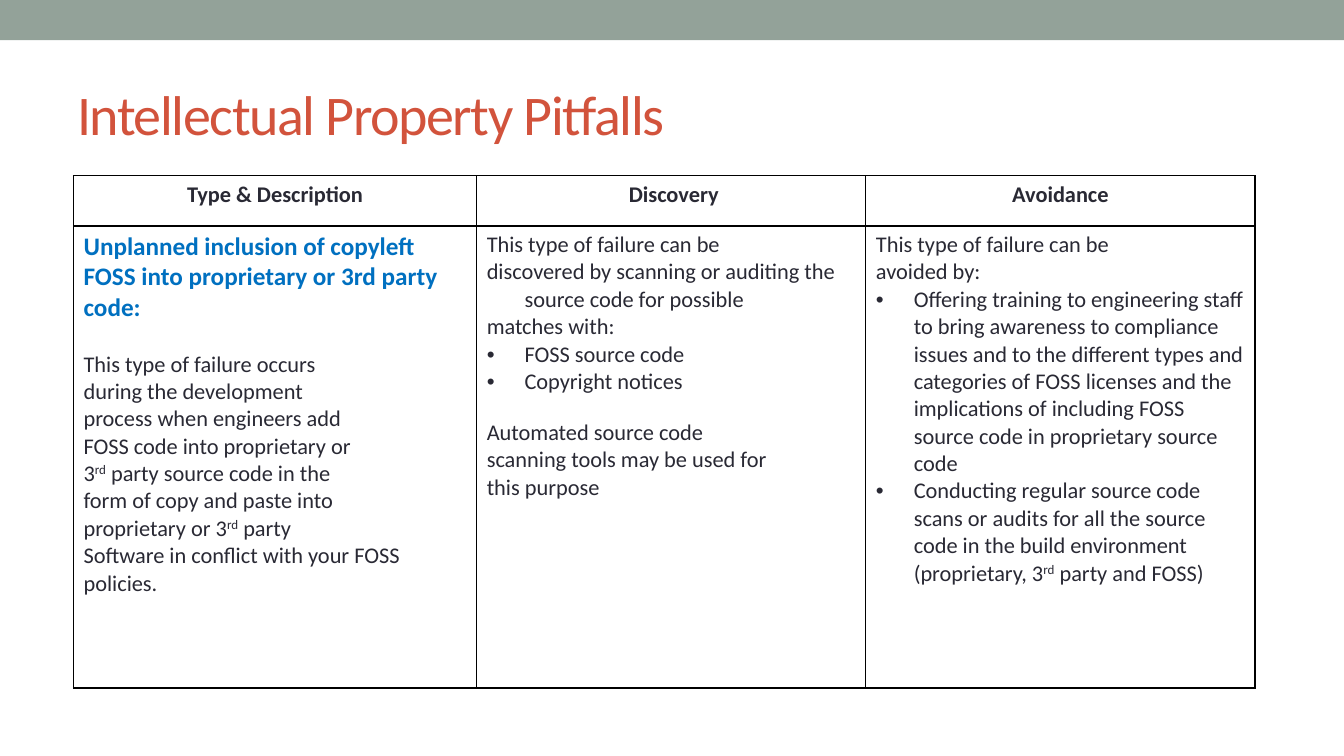
from lxml.etree import SubElement
from pptx import Presentation
from pptx.dml.color import RGBColor
from pptx.enum.shapes import MSO_SHAPE
from pptx.enum.text import MSO_ANCHOR, PP_ALIGN
from pptx.oxml import parse_xml
from pptx.oxml.ns import nsdecls, qn
from pptx.util import Pt

COLORS = {"band": "93A299", "title": "D2533C", "text": "292934",
          "lead": "0070C0", "border": "000000"}
FONT = "Calibri"
HANG = 27

HEADERS = ["Type & Description", " Discovery", "Avoidance"]
# Each paragraph is (style, text); ^ encloses superscript, "gap" opens a new block
BODIES = [
    [("lead", "Unplanned inclusion of copyleft FOSS into proprietary or 3rd party code:"),
     ("flush gap", "This type of failure occurs"),
     ("flush", "during the development"),
     ("flush", "process when engineers add"),
     ("flush", "FOSS code into proprietary or"),
     ("flush", "3^rd^ party source code in the"),
     ("flush", "form of copy and paste into"),
     ("flush", "proprietary or 3^rd^ party"),
     ("flush", "Software in conflict with your FOSS policies.")],
    [("hang", "This type of failure can be"),
     ("hang", "discovered by scanning or auditing the source code for possible"),
     ("hang", "matches with:"),
     ("bullet", "FOSS source code"),
     ("bullet", "Copyright notices"),
     ("hang gap", "Automated source code"),
     ("hang", "scanning tools may be used for"),
     ("hang", "this purpose")],
    [("hang", "This type of failure can be"),
     ("hang", "avoided by:"),
     ("bullet", "Offering training to engineering staff to bring awareness to compliance "
                "issues and to the different types and categories of FOSS licenses and the "
                "implications of including FOSS source code in proprietary source code"),
     ("bullet", "Conducting regular source code scans or audits for all the source code in "
                "the build environment (proprietary, 3^rd^ party and FOSS)")],
]


def color(name):
    return RGBColor.from_string(COLORS[name])


def add_run(p, text, size, col, bold=False):
    r = p.add_run()
    r.text = text
    f = r.font
    f.name, f.size, f.bold = FONT, Pt(size), bold
    f.color.rgb = color(col)
    return r


def add_band(s, x, y, w, h):
    sp = s.shapes.add_shape(MSO_SHAPE.RECTANGLE, Pt(x), Pt(y), Pt(w), Pt(h))
    sp.shadow.inherit = False
    sp.fill.solid()
    sp.fill.fore_color.rgb = color("band")
    sp.line.fill.background()


def add_title(s, x, y, w, h, text):
    tf = s.shapes.add_textbox(Pt(x), Pt(y), Pt(w), Pt(h)).text_frame
    tf.word_wrap = True
    tf.vertical_anchor = MSO_ANCHOR.MIDDLE
    r = add_run(tf.paragraphs[0], text, 40, "title")
    r._r.get_or_add_rPr().set("spc", "-100")


def set_borders(cell):
    tcPr = cell._tc.get_or_add_tcPr()
    for i, side in enumerate(("lnL", "lnR", "lnT", "lnB")):
        tcPr.insert(i, parse_xml(
            f'<a:{side} {nsdecls("a")} w="{Pt(1)}"><a:solidFill>'
            f'<a:srgbClr val="{COLORS["border"]}"/></a:solidFill></a:{side}>'))


def fill_body(tf, paragraphs):
    for i, (style, text) in enumerate(paragraphs):
        p = tf.paragraphs[0] if i == 0 else tf.add_paragraph()
        kind, _, gap = style.partition(" ")
        if gap:
            p.space_before = Pt(19.5 if kind == "flush" else 17)
        if kind in ("hang", "bullet"):
            pPr = p._p.get_or_add_pPr()
            pPr.set("marL", str(Pt(HANG)))
            pPr.set("indent", str(Pt(-HANG)))
            if kind == "bullet":
                SubElement(pPr, qn("a:buFont")).set("typeface", "Arial")
                SubElement(pPr, qn("a:buChar")).set("char", "•")
        lead = kind == "lead"
        for j, part in enumerate(text.split("^")):
            r = add_run(p, part, 18 if lead else 16, "lead" if lead else "text", lead)
            if j % 2:
                r._r.get_or_add_rPr().set("baseline", "30000")


def add_pitfalls_table(s, x, y, w, h):
    table = s.shapes.add_table(2, 3, Pt(x), Pt(y), Pt(w), Pt(h)).table
    table.first_row = table.horz_banding = False
    header_h, first_w = 36, 288
    for row, height in zip(table.rows, (header_h, h - header_h)):
        row.height = Pt(height)
    other_w = (w - first_w) / 2
    for col, width in zip(table.columns, (first_w, other_w, other_w)):
        col.width = Pt(width)
    for cell in table.iter_cells():
        cell.fill.background()
        set_borders(cell)
    for c, (header, body) in enumerate(zip(HEADERS, BODIES)):
        p = table.cell(0, c).text_frame.paragraphs[0]
        p.alignment = PP_ALIGN.CENTER
        add_run(p, header, 16, "text", True)
        fill_body(table.cell(1, c).text_frame, body)


def main():
    prs = Presentation()
    prs.slide_width, prs.slide_height = Pt(960), Pt(540)
    s = prs.slides.add_slide(prs.slide_layouts[6])
    # Top band
    add_band(s, 0, 0, 960, 28.8)
    # Title
    add_title(s, 48, 42, 864, 78, "Intellectual Property Pitfalls")
    # Pitfalls table
    add_pitfalls_table(s, 52.5, 125.5, 844, 366)
    prs.save("out.pptx")


if __name__ == "__main__":
    main()
